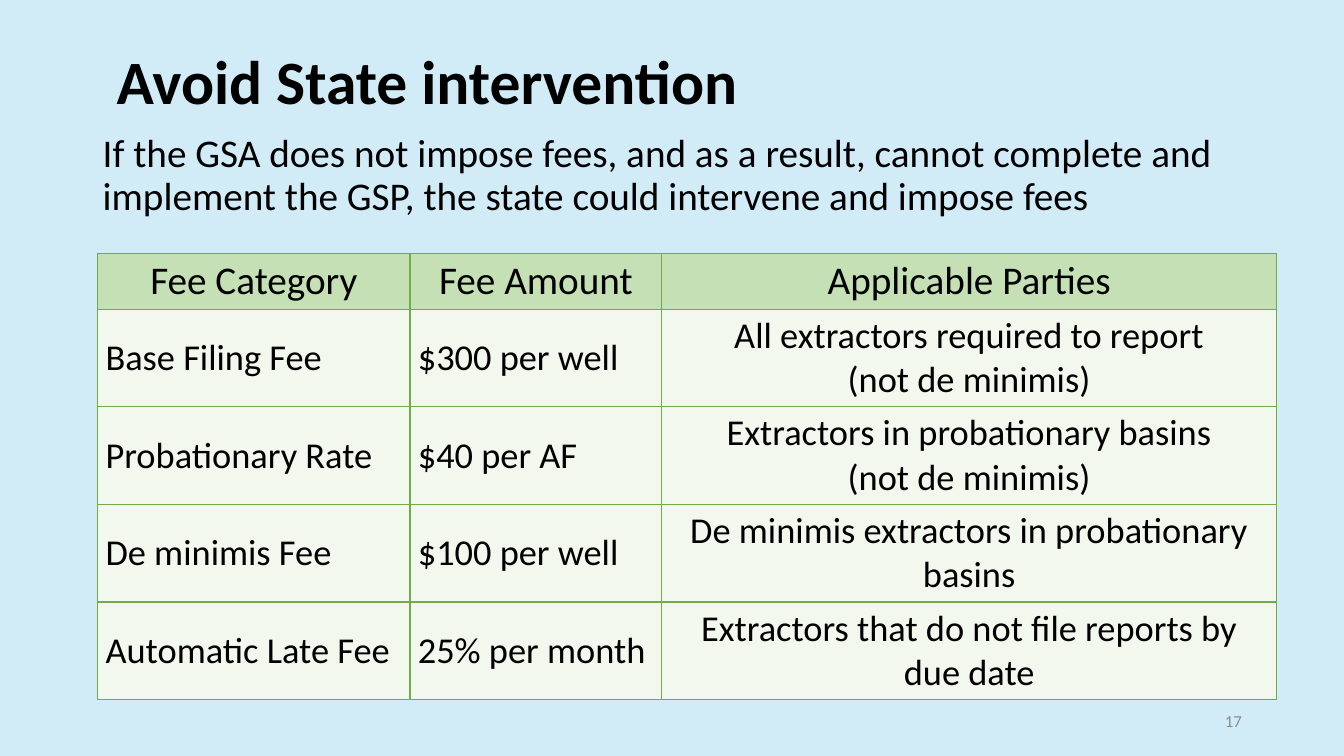
"""Builds the slide on the fees the state could impose."""
from lxml import etree
from pptx import Presentation
from pptx.dml.color import RGBColor
from pptx.enum.text import MSO_ANCHOR, PP_ALIGN
from pptx.oxml.ns import qn
from pptx.util import Cm, Pt

LEFT, CENTER, RIGHT = PP_ALIGN.LEFT, PP_ALIGN.CENTER, PP_ALIGN.RIGHT
TOP, MIDDLE = MSO_ANCHOR.TOP, MSO_ANCHOR.MIDDLE
FONT = "Calibri"
COLORS = {
    "background": "D1ECF7",
    "text": "000000",
    "number": "8C8C8C",
    "header": "C5E0B4",
    "row": "F2F8EE",
    "border": "70AD47",
}
COLUMN_WIDTHS = (7.87, 6.35, 15.49)
HEADER_HEIGHT, ROW_HEIGHT = 1.41, 2.46
FEES = [
    ("Fee Category", "Fee Amount", "Applicable Parties"),
    ("Base Filing Fee", "$300 per well",
     "All extractors required to report\n(not de minimis)"),
    ("Probationary Rate", "$40 per AF",
     "Extractors in probationary basins\n(not de minimis)"),
    ("De minimis Fee", "$100 per well",
     "De minimis extractors in probationary basins"),
    ("Automatic Late Fee", "25% per month",
     "Extractors that do not file reports by due date"),
]


def rgb(name):
    return RGBColor.from_string(COLORS[name])


def style_paragraph(p, size, align=LEFT, color="text", bold=False):
    p.alignment = align
    p.font.name = FONT
    p.font.size = Pt(size)
    p.font.bold = bold
    p.font.color.rgb = rgb(color)


def add_text(s, box, text, size, anchor=TOP, spacing=1.0, **style):
    tf = s.shapes.add_textbox(*map(Cm, box)).text_frame
    tf.word_wrap = True
    tf.vertical_anchor = anchor
    p = tf.paragraphs[0]
    p.text = text
    p.line_spacing = spacing
    style_paragraph(p, size, **style)


def add_borders(cell):
    tc_pr = cell._tc.get_or_add_tcPr()
    for side in ("a:lnL", "a:lnR", "a:lnT", "a:lnB"):
        ln = etree.SubElement(tc_pr, qn(side), w=str(Pt(1)))
        fill = etree.SubElement(ln, qn("a:solidFill"))
        etree.SubElement(fill, qn("a:srgbClr"), val=COLORS["border"])


def add_fee_table(s, left, top):
    height = HEADER_HEIGHT + ROW_HEIGHT * (len(FEES) - 1)
    table = s.shapes.add_table(
        len(FEES), len(COLUMN_WIDTHS), Cm(left), Cm(top),
        Cm(sum(COLUMN_WIDTHS)), Cm(height)).table
    for column, width in zip(table.columns, COLUMN_WIDTHS):
        column.width = Cm(width)
    for i, fee in enumerate(FEES):
        header = i == 0
        table.rows[i].height = Cm(HEADER_HEIGHT if header else ROW_HEIGHT)
        for j, text in enumerate(fee):
            cell = table.cell(i, j)
            cell.text = text
            cell.vertical_anchor = MIDDLE
            cell.margin_left = cell.margin_right = Cm(0.2)
            cell.margin_top = cell.margin_bottom = Cm(0.1)
            add_borders(cell)
            cell.fill.solid()
            cell.fill.fore_color.rgb = rgb("header" if header else "row")
            align = CENTER if header or j == 2 else LEFT
            for p in cell.text_frame.paragraphs:
                style_paragraph(p, 28 if header else 26, align)


def add_fee_slide(prs):
    s = prs.slides.add_slide(prs.slide_layouts[6])
    s.background.fill.solid()
    s.background.fill.fore_color.rgb = rgb("background")
    add_text(s, (2.69, 0.3, 29.21, 3.68), "Avoid State intervention", 44,
             anchor=MIDDLE, spacing=0.9, bold=True)
    add_text(s, (2.34, 3.25, 29.21, 3.68),
             "If the GSA does not impose fees, and as a result, cannot complete "
             "and implement the GSP, the state could intervene and impose fees",
             28, spacing=0.9)
    add_fee_table(s, 2.46, 6.38)
    add_text(s, (23.93, 17.65, 7.62, 1.02), "17", 12, anchor=MIDDLE,
             align=RIGHT, color="number")


def main():
    prs = Presentation()
    prs.slide_width, prs.slide_height = Cm(33.87), Cm(19.05)
    add_fee_slide(prs)
    prs.save("out.pptx")


if __name__ == "__main__":
    main()
